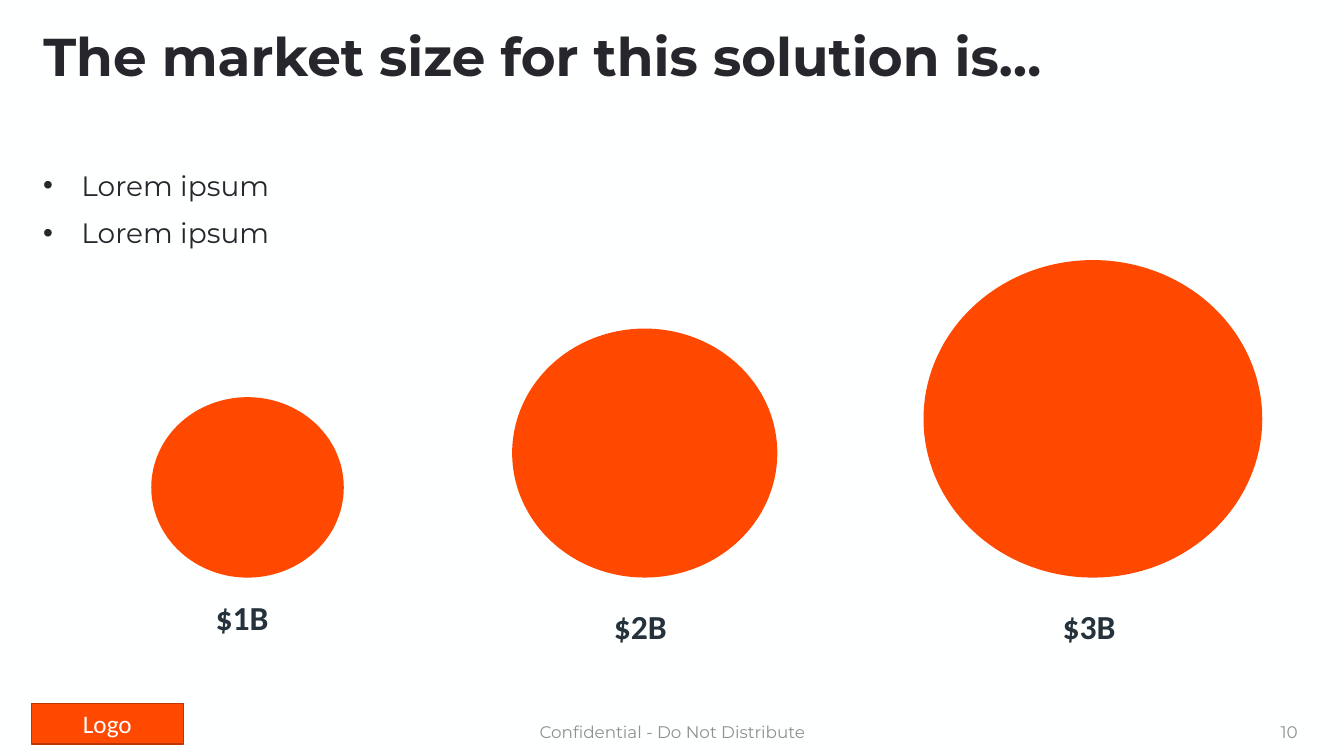
from lxml import etree
from pptx import Presentation
from pptx.dml.color import RGBColor
from pptx.enum.shapes import MSO_SHAPE
from pptx.enum.text import MSO_ANCHOR, MSO_AUTO_SIZE, PP_ALIGN
from pptx.oxml.ns import qn
from pptx.util import Inches, Pt

PAPER = RGBColor(0xFE, 0xFF, 0xFF)
INK = RGBColor(0x28, 0x26, 0x2D)
SLATE = RGBColor(0x25, 0x32, 0x3B)
GREY = RGBColor(0x8E, 0x90, 0x92)
ORANGE = RGBColor(0xFF, 0x49, 0x00)
LOGO_ORANGE = RGBColor(0xFF, 0x48, 0x00)
LOGO_EDGE = RGBColor(0xBD, 0x35, 0x00)


def write(paragraph, text, font_name, size, color, bold=False, align=PP_ALIGN.LEFT):
    paragraph.text = text
    paragraph.alignment = align
    font_format = {"name": font_name, "size": Pt(size), "bold": bold}
    for attribute, value in font_format.items():
        setattr(paragraph.font, attribute, value)
    paragraph.font.color.rgb = color


def add_plain_shape(kind, left, top, width, height, color):
    shape = slide.shapes.add_shape(
        kind, Inches(left), Inches(top), Inches(width), Inches(height))
    shape.shadow.inherit = False
    shape.fill.solid()
    shape.fill.fore_color.rgb = color
    shape.line.fill.background()
    return shape


prs = Presentation()
prs.slide_width = Inches(13.33)
prs.slide_height = Inches(7.5)
slide = prs.slides.add_slide(prs.slide_layouts[5])
slide.background.fill.solid()
slide.background.fill.fore_color.rgb = PAPER

# Title
title = slide.shapes.title
title.left, title.top = Inches(0.33), Inches(0.25)
title.width, title.height = Inches(12.63), Inches(0.67)
title.text_frame.vertical_anchor = MSO_ANCHOR.MIDDLE
title.text_frame.auto_size = MSO_AUTO_SIZE.NONE
headline = title.text_frame.paragraphs[0]
write(headline, "The market size for this solution is…", "Montserrat", 38, INK, bold=True)
headline.line_spacing = 0.9

# Logo placeholder and footer
logo = add_plain_shape(MSO_SHAPE.RECTANGLE, 0.31, 6.98, 1.51, 0.4, LOGO_ORANGE)
logo.line.color.rgb = LOGO_EDGE
logo.line.width = Pt(1)
logo.text_frame.vertical_anchor = MSO_ANCHOR.MIDDLE
write(logo.text_frame.paragraphs[0], "Logo", "Calibri", 18, PAPER, align=PP_ALIGN.CENTER)

for text, left, width, align in (
    ("Confidential - Do Not Distribute", 4.42, 4.5, PP_ALIGN.CENTER),
    ("10", 9.97, 3, PP_ALIGN.RIGHT),
):
    footer = slide.shapes.add_textbox(
        Inches(left), Inches(7.06), Inches(width), Inches(0.4)).text_frame
    footer.word_wrap = True
    footer.vertical_anchor = MSO_ANCHOR.MIDDLE
    write(footer.paragraphs[0], text, "Montserrat", 12, GREY, align=align)

# Bullet points
points = slide.shapes.add_textbox(
    Inches(0.33), Inches(1.62), Inches(12.63), Inches(5.28)).text_frame
points.word_wrap = True
for index, text in enumerate(["Lorem ipsum", "Lorem ipsum"]):
    point = points.add_paragraph() if index else points.paragraphs[0]
    if index:
        point.space_before = Pt(10)
    properties = point._p.get_or_add_pPr()
    properties.set("marL", str(Inches(0.38)))
    properties.set("indent", str(Inches(-0.38)))
    etree.SubElement(properties, qn("a:buFont"), typeface="Arial")
    etree.SubElement(properties, qn("a:buChar"), char="•")
    write(point, text, "Montserrat", 20, INK)

# Market bubbles share one baseline
BASELINE = 5.73
for amount, left, width, height, label_left, label_top in (
    ("$1B", 1.5, 1.91, 1.79, 2.04, 5.87),
    ("$2B", 5.08, 2.63, 2.47, 5.99, 5.96),
    ("$3B", 9.16, 3.36, 3.15, 10.44, 5.96),
):
    add_plain_shape(MSO_SHAPE.OVAL, left, BASELINE - height, width, height, ORANGE)
    label = slide.shapes.add_textbox(
        Inches(label_left), Inches(label_top), Inches(0.81), Inches(0.5)).text_frame
    label.word_wrap = True
    label.auto_size = MSO_AUTO_SIZE.SHAPE_TO_FIT_TEXT
    write(label.paragraphs[0], amount, "Calibri", 24, SLATE, bold=True)

prs.save("out.pptx")
